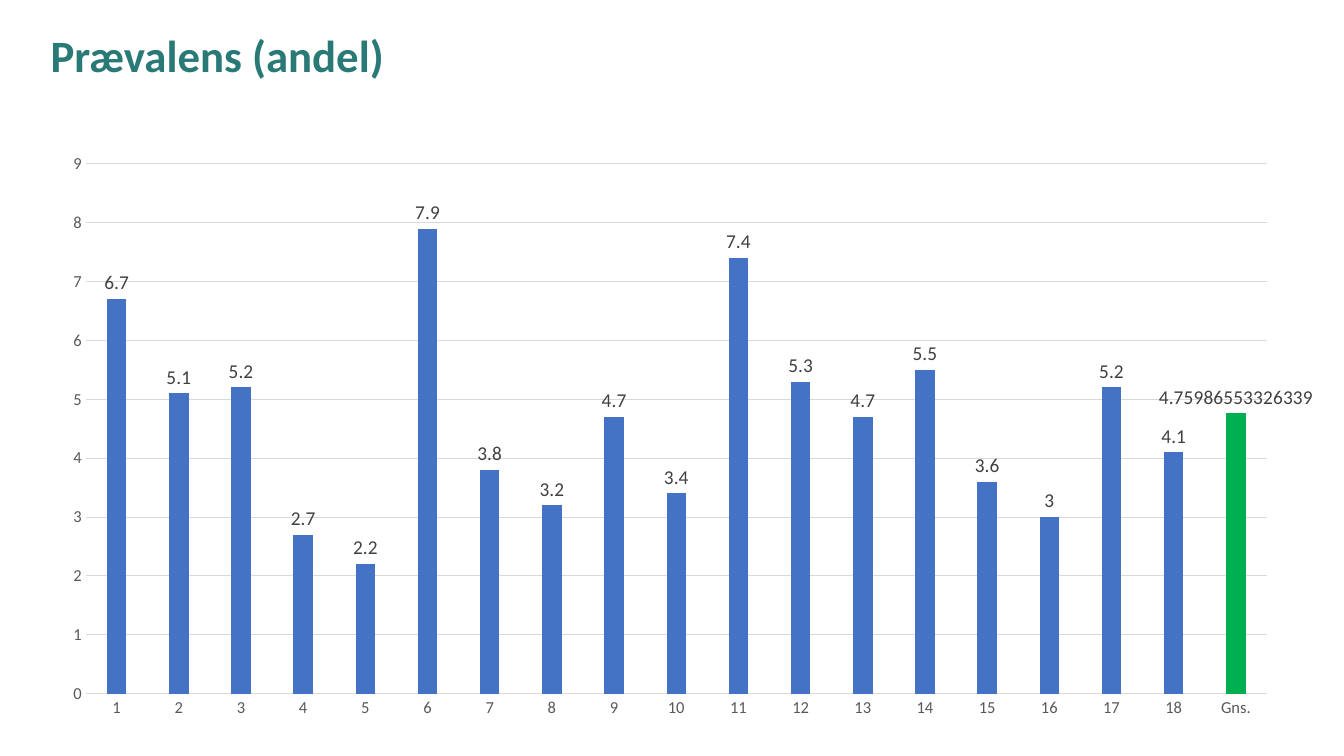
from pptx import Presentation
from pptx.chart.data import CategoryChartData
from pptx.dml.color import RGBColor
from pptx.enum.chart import XL_CHART_TYPE, XL_LABEL_POSITION, XL_TICK_MARK
from pptx.enum.text import MSO_ANCHOR, PP_ALIGN
from pptx.util import Cm, Pt

TEAL = RGBColor(0x29, 0x7A, 0x77)
BLUE = RGBColor(0x44, 0x72, 0xC4)
GREEN = RGBColor(0x00, 0xB0, 0x50)
GRID_GREY = RGBColor(0xD9, 0xD9, 0xD9)
AXIS_GREY = RGBColor(0x59, 0x59, 0x59)
LABEL_GREY = RGBColor(0x40, 0x40, 0x40)
FONT = "Calibri"

prevalences = [6.7, 5.1, 5.2, 2.7, 2.2, 7.9, 3.8, 3.2, 4.7,
               3.4, 7.4, 5.3, 4.7, 5.5, 3.6, 3, 5.2, 4.1]
average = 4.76


def style_font(font, size, color):
    font.name = FONT
    font.size = Pt(size)
    font.color.rgb = color


presentation = Presentation()
presentation.slide_width = Cm(33.87)
presentation.slide_height = Cm(19.05)
slide = presentation.slides.add_slide(presentation.slide_layouts[5])

# Title
title = slide.shapes.title
title.left, title.top, title.width, title.height = Cm(1.02), Cm(0.23), Cm(32.05), Cm(2.46)
title.text_frame.text = "Prævalens (andel)"
title.text_frame.vertical_anchor = MSO_ANCHOR.MIDDLE
heading = title.text_frame.paragraphs[0]
heading.alignment = PP_ALIGN.LEFT
heading.line_spacing = 0.9
style_font(heading.runs[0].font, 32, TEAL)
heading.runs[0].font.bold = True

# Column chart: one column per number, then the average
prevalence_data = CategoryChartData()
prevalence_data.categories = [str(n + 1) for n in range(len(prevalences))] + ["Gns."]
prevalence_data.add_series("Series 1", prevalences + [average])
chart = slide.shapes.add_chart(
    XL_CHART_TYPE.COLUMN_CLUSTERED,
    Cm(1.22), Cm(3.58), Cm(31.87), Cm(14.8), prevalence_data).chart
chart.has_legend = False
chart.has_title = False
chart.font.name = FONT
chart.font.size = Pt(10)

# Columns, with the average highlighted
plot = chart.plots[0]
plot.gap_width = 219
plot.overlap = -27
plot.vary_by_categories = False
columns = plot.series[0]
columns.invert_if_negative = False
columns.format.fill.solid()
columns.format.fill.fore_color.rgb = BLUE
average_column = columns.points[len(prevalences)]
average_column.format.fill.solid()
average_column.format.fill.fore_color.rgb = GREEN

# Value labels
value_labels = columns.data_labels
value_labels.show_value = True
value_labels.position = XL_LABEL_POSITION.OUTSIDE_END
value_labels.number_format = "General"
value_labels.number_format_is_linked = False
style_font(value_labels.font, 14, LABEL_GREY)

# The average is labelled with all its decimals
average_label = average_column.data_label
average_label.text_frame.text = "4.75986553326339"
average_label.position = XL_LABEL_POSITION.OUTSIDE_END
style_font(average_label.text_frame.paragraphs[0].runs[0].font, 14, LABEL_GREY)

# Axes and gridlines
for axis in (chart.category_axis, chart.value_axis):
    axis.major_tick_mark = XL_TICK_MARK.NONE
    axis.minor_tick_mark = XL_TICK_MARK.NONE
    style_font(axis.tick_labels.font, 12, AXIS_GREY)
chart.value_axis.minimum_scale = 0
chart.value_axis.maximum_scale = 9
chart.value_axis.major_unit = 1
chart.value_axis.has_major_gridlines = True
chart.value_axis.format.line.fill.background()
for line in (chart.category_axis.format.line,
             chart.value_axis.major_gridlines.format.line):
    line.color.rgb = GRID_GREY
    line.width = Pt(0.75)

presentation.save("out.pptx")
